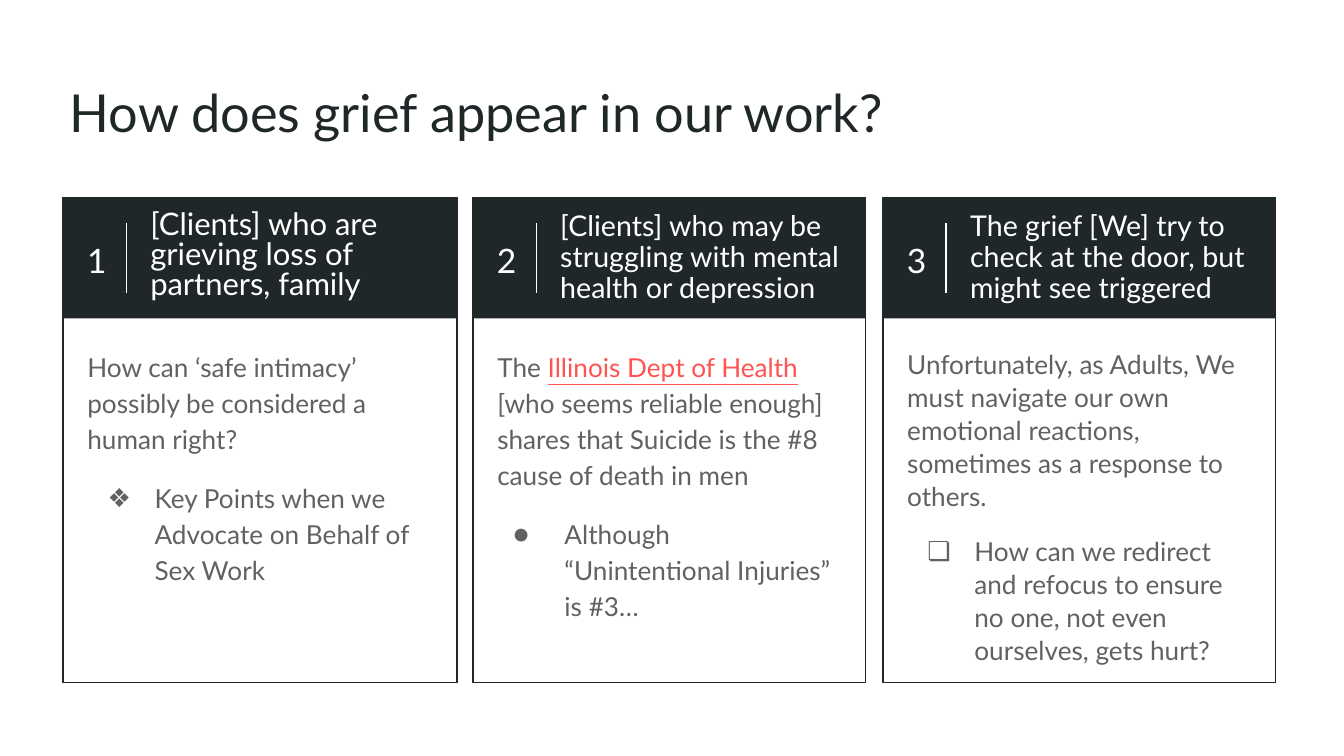
from lxml import etree
from pptx import Presentation
from pptx.dml.color import RGBColor
from pptx.enum.shapes import MSO_CONNECTOR, MSO_SHAPE
from pptx.enum.text import MSO_ANCHOR, MSO_AUTO_SIZE, PP_ALIGN
from pptx.oxml.ns import qn
from pptx.util import Inches, Pt

RECT, STRAIGHT = MSO_SHAPE.RECTANGLE, MSO_CONNECTOR.STRAIGHT
TOP, MIDDLE = MSO_ANCHOR.TOP, MSO_ANCHOR.MIDDLE
LEFT, CENTER = PP_ALIGN.LEFT, PP_ALIGN.CENTER
COLORS = {k: RGBColor.from_string(v) for k, v in {
    "dark": "202729", "white": "FFFFFF", "gray": "616161", "link": "FF5252"}.items()}


def place(sp, left, top, width, height, anchor):
    sp.left, sp.top = Inches(left), Inches(top)
    sp.width, sp.height = Inches(width), Inches(height)
    tf = sp.text_frame
    tf.word_wrap = True
    tf.auto_size = MSO_AUTO_SIZE.NONE
    tf.vertical_anchor = anchor
    tf.margin_left = tf.margin_right = tf.margin_top = tf.margin_bottom = Inches(0.1)
    return tf


def style(p, size, color, spacing=1.0, before=0, align=LEFT):
    p.alignment, p.line_spacing, p.space_before = align, spacing, Pt(before)
    for r in p.runs:
        r.font.name, r.font.size, r.font.bold = "Lato", Pt(size), False
        r.font.color.rgb = COLORS[color]


CARDS = [
    {"head": "[Clients] who are grieving loss of partners, family",
     "head_top": 1.46, "head_size": 16.6, "head_spacing": 0.8, "width": 2.93,
     "intro": ["How can ‘safe intimacy’ possibly be considered a human right?"],
     "point": "Key Points when we Advocate on Behalf of Sex Work",
     "bullet": "❖", "hang": 0.35, "spacing": 1.15},
    {"head": "[Clients] who may be struggling with mental health or depression",
     "head_top": 1.47, "head_size": 15.3, "head_spacing": 0.9, "width": 2.92,
     "intro": ["The ", "Illinois Dept of Health",
               " [who seems reliable enough] shares that Suicide is the #8 cause of death in men"],
     "point": "Although “Unintentional Injuries” is #3…",
     "bullet": "●", "hang": 0.38, "spacing": 1.15},
    {"head": "The grief [We] try to check at the door, but might see triggered",
     "head_top": 1.47, "head_size": 15.3, "head_spacing": 0.9, "width": 2.92,
     "intro": ["Unfortunately, as Adults, We must navigate our own emotional reactions, "
               "sometimes as a response to others."],
     "point": "How can we redirect and refocus to ensure no one, not even ourselves, gets hurt?",
     "bullet": "❏", "hang": 0.35, "spacing": 1.05},
]

prs = Presentation()
prs.slide_width = Inches(10)
prs.slide_height = Inches(10) * 9 // 16
s = prs.slides.add_slide(prs.slide_layouts[4])

title = s.shapes.title
tf = place(title, 0.42, 0.5, 9.15, 0.75, TOP)
tf.text = "How does grief appear in our work?"
style(tf.paragraphs[0], 28, "dark")

bodies = list(s.placeholders)[1:]
spare = bodies.pop()
spare.element.getparent().remove(spare.element)

for i, (card, body) in enumerate(zip(CARDS, bodies)):
    x = 0.47 + 3.05 * i
    width = Inches(card["width"])
    group = s.shapes.add_group_shape()
    frame = group.shapes.add_shape(RECT, Inches(x), Inches(1.47), width, Inches(3.61))
    frame.fill.background()
    frame.line.color.rgb = COLORS["dark"]
    frame.line.width = Pt(0.75)
    header = group.shapes.add_shape(RECT, Inches(x), Inches(1.47), width, Inches(0.9))
    header.fill.solid()
    header.fill.fore_color.rgb = COLORS["dark"]
    header.line.fill.background()
    for sp in (frame, header):
        sp.shadow.inherit = False

    divider = s.shapes.add_connector(
        STRAIGHT, Inches(x + 0.47), Inches(1.66), Inches(x + 0.47), Inches(2.18))
    divider.line.color.rgb = COLORS["white"]
    divider.line.width = Pt(0.75)
    etree.SubElement(divider.element.spPr, qn("a:effectLst"))

    number = s.shapes.add_textbox(0, 0, 0, 0)
    tf = place(number, x + 0.06, 1.46, 0.38, 0.9, MIDDLE)
    tf.text = str(i + 1)
    style(tf.paragraphs[0], 18, "white", 1.15, align=CENTER)

    heading = s.shapes.add_textbox(0, 0, 0, 0)
    tf = place(heading, x + 0.55, card["head_top"], 2.3, 0.9, MIDDLE)
    tf.text = card["head"]
    style(tf.paragraphs[0], card["head_size"], "white", card["head_spacing"])

    tf = place(body, x + 0.08, 2.48, 2.77, 2.6, TOP)
    p = tf.paragraphs[0]
    for text in card["intro"]:
        p.add_run().text = text
    pPr = p._p.get_or_add_pPr()
    pPr.set("marL", "0")
    pPr.set("indent", "0")
    etree.SubElement(pPr, qn("a:buNone"))
    style(p, 14, "gray", card["spacing"])
    for r in p.runs[1:2]:
        r.font.color.rgb = COLORS["link"]
        r.font.underline = True

    p = tf.add_paragraph()
    p.text = card["point"]
    pPr = p._p.get_or_add_pPr()
    pPr.set("marL", str(Inches(0.5)))
    pPr.set("indent", str(-Inches(card["hang"])))
    color = etree.SubElement(pPr, qn("a:buClr"))
    etree.SubElement(color, qn("a:srgbClr"), val=str(COLORS["gray"]))
    etree.SubElement(pPr, qn("a:buFont"), typeface="Lato")
    etree.SubElement(pPr, qn("a:buChar"), char=card["bullet"])
    style(p, 14, "gray", card["spacing"], before=12)

prs.save("out.pptx")
